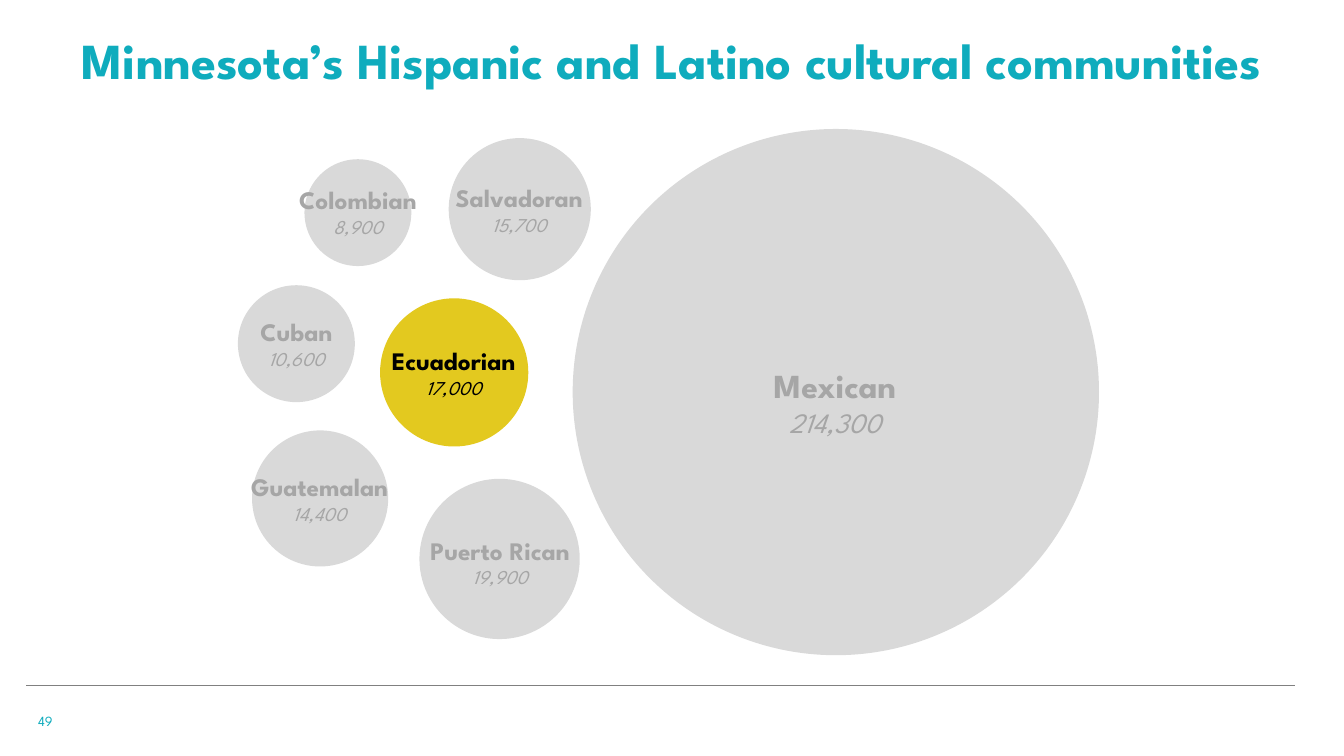
from lxml.etree import SubElement
from pptx import Presentation
from pptx.dml.color import RGBColor
from pptx.enum.shapes import MSO_CONNECTOR, MSO_SHAPE
from pptx.enum.text import MSO_ANCHOR, MSO_AUTO_SIZE, PP_ALIGN
from pptx.oxml.ns import qn
from pptx.util import Pt

PX = 9144  # EMU in one px, at 100 px to the inch
FONT = "League Spartan"
COLORS = {
    "teal": "0FACBD",
    "rule": "808080",
    "bubble": "D9D9D9",
    "muted": "A6A6A6",
    "highlight": "E3C91F",
    "black": "000000",
}


def add_box(shapes, left, top, width, height, **frame_format):
    """Add a wrapping text box and return its first paragraph."""
    box = shapes.add_textbox(left * PX, top * PX, width * PX, height * PX)
    box.text_frame.word_wrap = True
    for name, value in frame_format.items():
        setattr(box.text_frame, name, value)
    return box.text_frame.paragraphs[0]


def add_span(para, text, color, size, **font_format):
    span = para.add_run()
    span.text = text
    span.font.color.rgb = RGBColor.from_string(COLORS[color])
    for name, value in {"name": FONT, "size": Pt(size), **font_format}.items():
        setattr(span.font, name, value)


deck = Presentation()
deck.slide_width, deck.slide_height = 1333 * PX, 750 * PX
page = deck.slides.add_slide(deck.slide_layouts[6])

# Footer: page number and rule
number = add_box(page.shapes, 28, 695, 300, 40, vertical_anchor=MSO_ANCHOR.MIDDLE)
add_span(number, "49", "teal", 10)

rule = page.shapes.add_connector(
    MSO_CONNECTOR.STRAIGHT, 26 * PX, 680 * PX, 1284 * PX, 680 * PX)
rule.line.color.rgb = RGBColor.from_string(COLORS["rule"])
rule.line.width = Pt(0.5)
SubElement(rule._element.spPr, qn("a:effectLst"))

# Bubbles: name, count, circle left, top and diameter, label left and top
communities = [
    ("Colombian", "8,900", 302, 158, 106, 256, 178),
    ("Mexican", "214,300", 568, 128, 522, 729, 357),
    ("Cuban", "10,600", 236, 283, 116, 195, 309),
    ("Ecuadorian", "17,000", 377, 296, 147, 351, 338),
    ("Guatemalan", "14,400", 250, 427, 135, 218, 463),
    ("Salvadoran", "15,700", 445, 137, 141, 416, 176),
    ("Puerto Rican", "19,900", 416, 475, 159, 397, 526),
]
for name, count, left, top, diameter, label_left, label_top in communities:
    fill, ink = ("highlight", "black") if name == "Ecuadorian" else ("bubble", "muted")
    name_size, count_size, label_height = (24, 20, 84) if name == "Mexican" else (18, 14, 64)

    group = page.shapes.add_group_shape()
    circle = group.shapes.add_shape(
        MSO_SHAPE.OVAL, left * PX, top * PX, diameter * PX, diameter * PX)
    circle.shadow.inherit = False
    circle.fill.solid()
    circle.fill.fore_color.rgb = RGBColor.from_string(COLORS[fill])
    circle.line.fill.background()

    label = add_box(group.shapes, label_left, label_top, 198, label_height,
                    auto_size=MSO_AUTO_SIZE.SHAPE_TO_FIT_TEXT)
    label.alignment = PP_ALIGN.CENTER
    add_span(label, name, ink, name_size, bold=True)
    label.add_line_break()
    add_span(label, count, ink, count_size, italic=True)

title = add_box(page.shapes, 0, 11, 1333, 84, vertical_anchor=MSO_ANCHOR.BOTTOM)
title.alignment = PP_ALIGN.CENTER
title.line_spacing = 0.9
add_span(title, "Minnesota’s Hispanic and Latino cultural communities", "teal", 36, bold=True)

deck.save("out.pptx")
